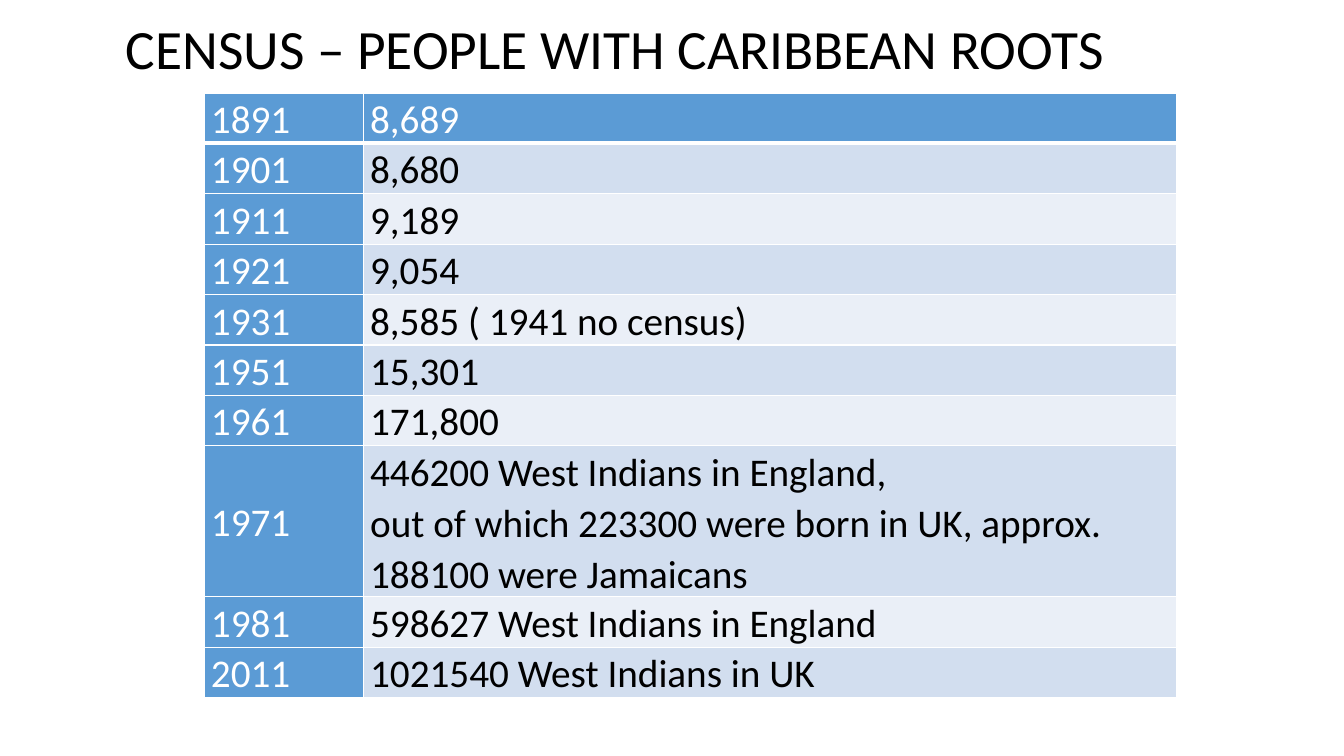
from dataclasses import dataclass

from lxml import etree
from pptx import Presentation
from pptx.dml.color import RGBColor
from pptx.enum.text import MSO_ANCHOR
from pptx.oxml.ns import qn
from pptx.util import Pt

MIDDLE = MSO_ANCHOR.MIDDLE


@dataclass(frozen=True)
class Theme:
    font: str = "Calibri"
    title_size: float = 39.6
    cell_size: float = 28
    black: str = "000000"
    white: str = "FFFFFF"
    header: str = "5B9BD5"
    bands: tuple = ("EAEFF7", "D2DEEF")
    border: float = 1
    header_border: float = 3


THEME = Theme()

TITLE = "CENSUS – PEOPLE WITH CARIBBEAN ROOTS"
CENSUS = [
    ("1891", ["8,689"]),
    ("1901", ["8,680"]),
    ("1911", ["9,189"]),
    ("1921", ["9,054"]),
    ("1931", ["8,585 ( 1941 no census)"]),
    ("1951", ["15,301"]),
    ("1961", ["171,800"]),
    ("1971", ["446200 West Indians in England,",
              "out of which 223300 were born in UK, approx. 188100 were Jamaicans"]),
    ("1981", ["598627 West Indians in England"]),
    ("2011", ["1021540 West Indians in UK"]),
]
COLUMN_WIDTHS = (113.75, 581)
ROW_HEIGHT = 30.25


def write_paragraphs(tf, lines, size, color, spacing):
    for i, line in enumerate(lines):
        p = tf.add_paragraph() if i else tf.paragraphs[0]
        p.line_spacing = spacing
        r = p.add_run()
        r.text = line
        r.font.name = THEME.font
        r.font.size = Pt(size)
        r.font.color.rgb = RGBColor.from_string(color)


def add_title(slide, text):
    sp = slide.shapes.add_textbox(Pt(82.8), Pt(-7.9), Pt(780), Pt(90))
    tf = sp.text_frame
    tf.word_wrap = True
    tf.vertical_anchor = MIDDLE
    write_paragraphs(tf, [text], THEME.title_size, THEME.black, 0.9)


def set_borders(cell, bottom):
    tc_pr = cell._tc.get_or_add_tcPr()
    widths = {"a:lnL": THEME.border, "a:lnR": THEME.border,
              "a:lnT": THEME.border, "a:lnB": bottom}
    for tag, width in widths.items():
        ln = etree.SubElement(tc_pr, qn(tag), w=str(Pt(width)))
        fill = etree.SubElement(ln, qn("a:solidFill"))
        etree.SubElement(fill, qn("a:srgbClr"), val=THEME.white)


def format_cell(cell, lines, fill, color, bottom):
    cell.vertical_anchor = MIDDLE
    cell.margin_left = cell.margin_right = Pt(5)
    cell.margin_top = cell.margin_bottom = Pt(0)
    # Borders come before the fill in the cell properties
    set_borders(cell, bottom)
    cell.fill.solid()
    cell.fill.fore_color.rgb = RGBColor.from_string(fill)
    write_paragraphs(cell.text_frame, lines, THEME.cell_size, color, 1.07)


def add_census_table(slide, census):
    table = slide.shapes.add_table(
        len(census), len(COLUMN_WIDTHS), Pt(145.7), Pt(66.4),
        Pt(sum(COLUMN_WIDTHS)), Pt(ROW_HEIGHT * len(census))).table
    table.first_row = table.horz_banding = False
    for column, width in zip(table.columns, COLUMN_WIDTHS):
        column.width = Pt(width)
    for i, (year, figures) in enumerate(census):
        table.rows[i].height = Pt(ROW_HEIGHT)
        bottom = THEME.border if i else THEME.header_border
        for j, lines in enumerate(([year], figures)):
            # First row and first column share the header look
            is_header = i == 0 or j == 0
            fill = THEME.header if is_header else THEME.bands[i % 2]
            color = THEME.white if is_header else THEME.black
            format_cell(table.cell(i, j), lines, fill, color, bottom)


def main():
    prs = Presentation()
    prs.slide_width, prs.slide_height = Pt(960), Pt(540)
    slide = prs.slides.add_slide(prs.slide_layouts[6])
    add_title(slide, TITLE)
    add_census_table(slide, CENSUS)
    prs.save("out.pptx")


if __name__ == "__main__":
    main()
